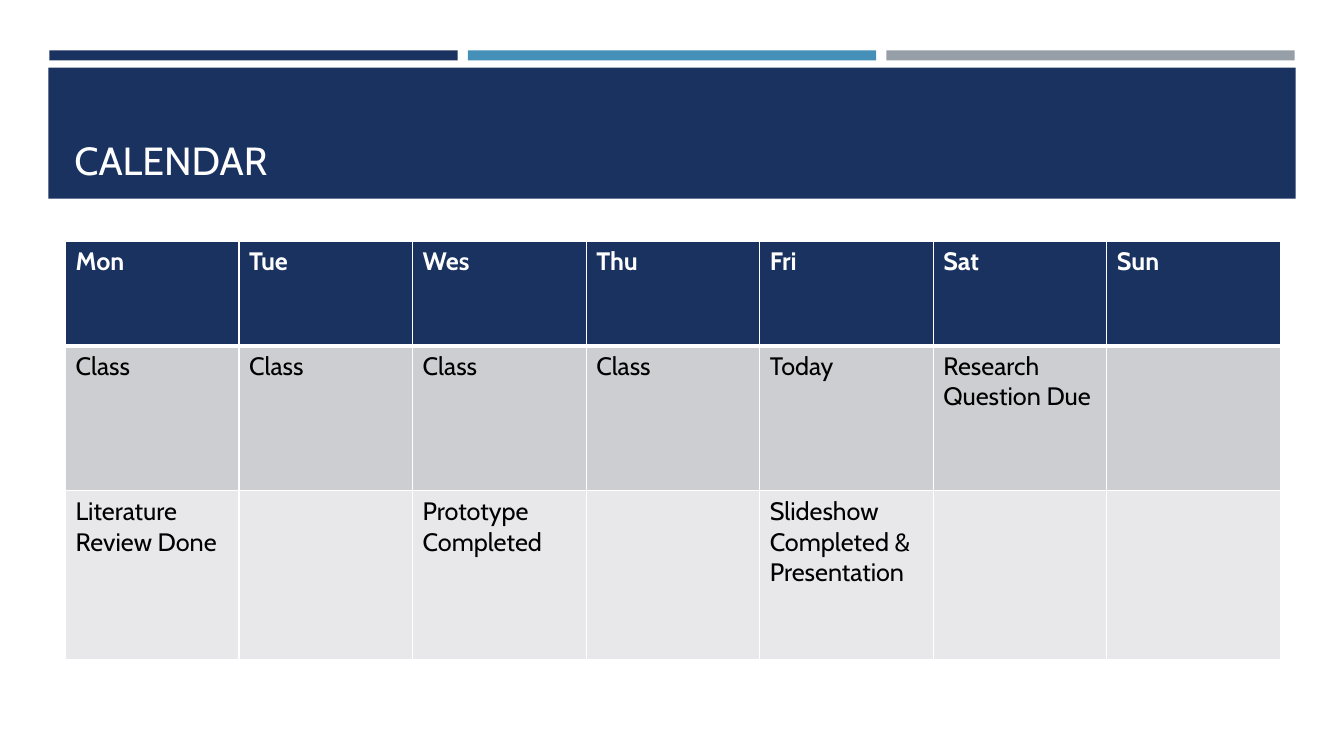
from dataclasses import dataclass

import pptx
import pptx.dml.color
import pptx.enum.shapes
import pptx.enum.text
import pptx.oxml
import pptx.oxml.ns
import pptx.util

Inches = pptx.util.Inches
Pt = pptx.util.Pt


@dataclass(frozen=True)
class Theme:
    font: str = "Cabin"
    title_size: int = 28
    cell_size: int = 18
    navy: str = "1A3260"
    blue: str = "4590B8"
    gray: str = "969FA7"
    white: str = "FFFFFF"
    black: str = "000000"
    band_dark: str = "CDCED2"
    band_light: str = "E8E8EA"
    grid_width: int = 1
    header_rule_width: int = 3


THEME = Theme()

CALENDAR = [
    ["Mon", "Tue", "Wes", "Thu", "Fri", "Sat", "Sun"],
    ["Class", "Class", "Class", "Class", "Today", "Research Question Due", ""],
    ["Literature Review Done", "", "Prototype Completed", "",
     "Slideshow Completed & Presentation", "", ""],
]
ROW_HEIGHTS = [1.04, 1.44, 1.67]
ROW_FILLS = [THEME.navy, THEME.band_dark, THEME.band_light]


def rgb(color):
    return pptx.dml.color.RGBColor.from_string(color)


def write_text(text_frame, text, *, size, color, bold=False):
    run = text_frame.paragraphs[0].add_run()
    run.text = text
    run.font.name = THEME.font
    run.font.size = Pt(size)
    run.font.bold = bold
    run.font.color.rgb = rgb(color)


def add_block(slide, left, top, width, height, color):
    shape = slide.shapes.add_shape(
        pptx.enum.shapes.MSO_SHAPE.RECTANGLE,
        Inches(left), Inches(top), Inches(width), Inches(height))
    shape.shadow.inherit = False
    shape.fill.solid()
    shape.fill.fore_color.rgb = rgb(color)
    shape.line.fill.background()


def add_accent_bars(slide, left, top, width, height, gap=0.1):
    colors = [THEME.navy, THEME.blue, THEME.gray]
    bar_width = (width - gap * (len(colors) - 1)) / len(colors)
    for index, color in enumerate(colors):
        add_block(slide, left + index * (bar_width + gap), top,
                  bar_width, height, color)


def add_title_band(slide, left, top, width, height, title):
    add_block(slide, left, top, width, height, THEME.navy)
    inset_x, inset_y = 0.16, 0.1
    box = slide.shapes.add_textbox(
        Inches(left + inset_x), Inches(top + inset_y),
        Inches(width - 2 * inset_x), Inches(height - 2 * inset_y))
    box.text_frame.word_wrap = True
    box.text_frame.vertical_anchor = pptx.enum.text.MSO_ANCHOR.BOTTOM
    write_text(box.text_frame, title, size=THEME.title_size, color=THEME.white)


def set_borders(cell, **widths):
    """Draw white cell borders; widths in points are keyed L, R, T and B."""
    properties = cell._tc.get_or_add_tcPr()
    namespace = pptx.oxml.ns.nsdecls("a")
    for side, width in widths.items():
        properties.append(pptx.oxml.parse_xml(
            f'<a:ln{side} {namespace} w="{Pt(width)}"><a:solidFill>'
            f'<a:srgbClr val="{THEME.white}"/></a:solidFill></a:ln{side}>'))


def add_calendar(slide, left, top, width):
    table = slide.shapes.add_table(
        len(CALENDAR), len(CALENDAR[0]), Inches(left), Inches(top),
        Inches(width), Inches(sum(ROW_HEIGHTS))).table
    for column in table.columns:
        column.width = Inches(width / len(CALENDAR[0]))

    thin, thick = THEME.grid_width, THEME.header_rule_width
    for row_index, entries in enumerate(CALENDAR):
        table.rows[row_index].height = Inches(ROW_HEIGHTS[row_index])
        is_header = row_index == 0
        for column_index, entry in enumerate(entries):
            cell = table.cell(row_index, column_index)
            set_borders(cell, L=thin, R=thin,
                        T=thick if row_index == 1 else thin,
                        B=thick if is_header else thin)
            cell.fill.solid()
            cell.fill.fore_color.rgb = rgb(ROW_FILLS[row_index])
            if entry:
                write_text(cell.text_frame, entry, size=THEME.cell_size,
                           color=THEME.white if is_header else THEME.black,
                           bold=is_header)


def build_calendar_slide(presentation):
    slide = presentation.slides.add_slide(presentation.slide_layouts[6])
    slide.background.fill.solid()
    slide.background.fill.fore_color.rgb = rgb(THEME.white)
    add_accent_bars(slide, 0.49, 0.5, 12.35, 0.1)
    add_title_band(slide, 0.48, 0.67, 12.37, 1.3, "CALENDAR")
    add_calendar(slide, 0.65, 2.39, 12.05)


def main():
    presentation = pptx.Presentation()
    presentation.slide_width = Inches(13.33)
    presentation.slide_height = Inches(7.5)
    build_calendar_slide(presentation)
    presentation.save("out.pptx")


if __name__ == "__main__":
    main()
